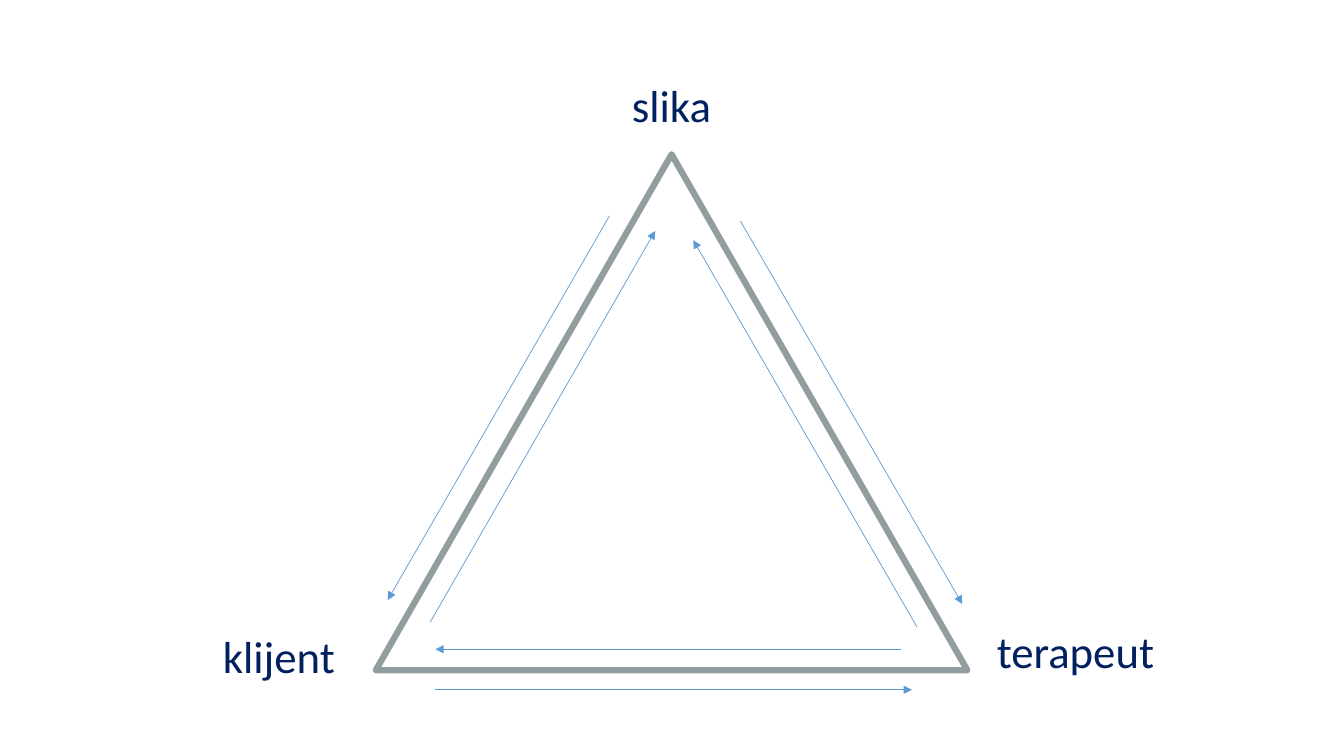
from lxml import etree
from pptx import Presentation, util as u
from pptx.dml.color import RGBColor
from pptx.enum import shapes, text
from pptx.oxml.ns import qn

LABELS = [
    ("slika", 4.09, -2.06, 6.73),
    ("terapeut", 14.27, 11.71, 6.73),
    ("klijent", -6.1, 11.84, 7.32),
]
ARROWS = [
    ((1.37, 11.79), (7.04, 1.93)),
    ((5.89, 1.55), (0.3, 11.23)),
    ((1.5, 13.49), (13.51, 13.49)),
    ((13.23, 12.47), (1.5, 12.47)),
    ((9.19, 1.68), (14.78, 11.33)),
    ((13.64, 11.91), (8, 2.16)),
]


def color(value):
    return RGBColor.from_string(value)


def add_label(slide, caption, left, top, width):
    label = slide.shapes.add_textbox(u.Cm(left), u.Cm(top), u.Cm(width), u.Cm(1.63))
    frame = label.text_frame
    frame.word_wrap = True
    frame.auto_size = text.MSO_AUTO_SIZE.SHAPE_TO_FIT_TEXT
    paragraph = frame.paragraphs[0]
    paragraph.text = caption
    paragraph.alignment = text.PP_ALIGN.CENTER
    paragraph.font.name = "Calibri"
    paragraph.font.size = u.Pt(32)
    paragraph.font.color.rgb = color("002060")


def add_arrow(slide, left, top, start, end):
    arrow = slide.shapes.add_connector(
        shapes.MSO_CONNECTOR.STRAIGHT,
        u.Cm(left + start[0]), u.Cm(top + start[1]),
        u.Cm(left + end[0]), u.Cm(top + end[1]),
    )
    arrow.line.color.rgb = color("5B9BD5")
    arrow.line.width = u.Pt(0.5)
    etree.SubElement(arrow.line._get_or_add_ln(), qn("a:tailEnd"), type="triangle")
    etree.SubElement(arrow._element.spPr, qn("a:effectLst"))


def add_relationship_triangle(slide, left, top, width, height):
    triangle = slide.shapes.add_shape(
        shapes.MSO_SHAPE.ISOSCELES_TRIANGLE,
        u.Cm(left), u.Cm(top), u.Cm(width), u.Cm(height),
    )
    triangle.shadow.inherit = False
    triangle.fill.background()
    triangle.line.color.rgb = color("919D9F")
    triangle.line.width = u.Pt(4.5)
    for caption, across, down, label_width in LABELS:
        add_label(slide, caption, left + across, top + down, label_width)
    for start, end in ARROWS:
        add_arrow(slide, left, top, start, end)


def main():
    presentation = Presentation()
    presentation.slide_width = u.Cm(33.87)
    presentation.slide_height = u.Cm(19.05)
    slide = presentation.slides.add_slide(presentation.slide_layouts[6])
    add_relationship_triangle(slide, 9.47, 3.89, 14.91, 13)
    presentation.save("out.pptx")


if __name__ == "__main__":
    main()
